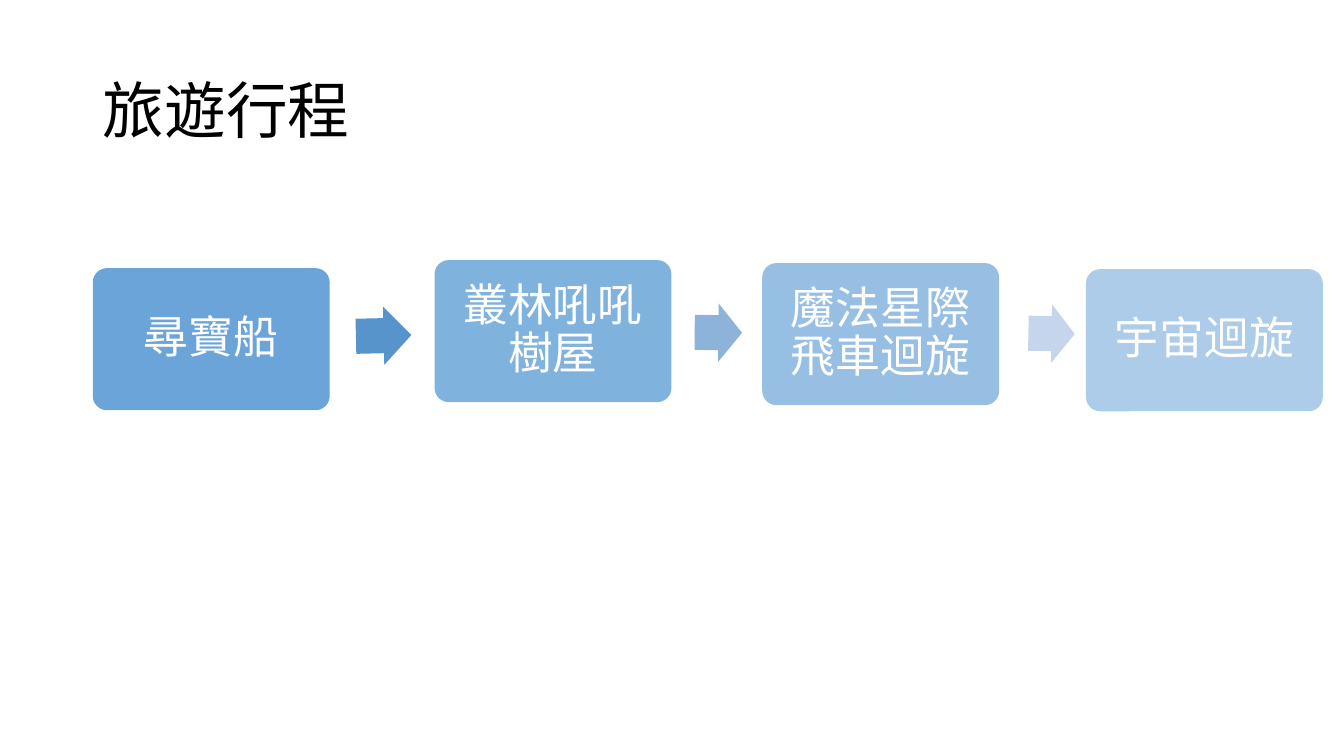
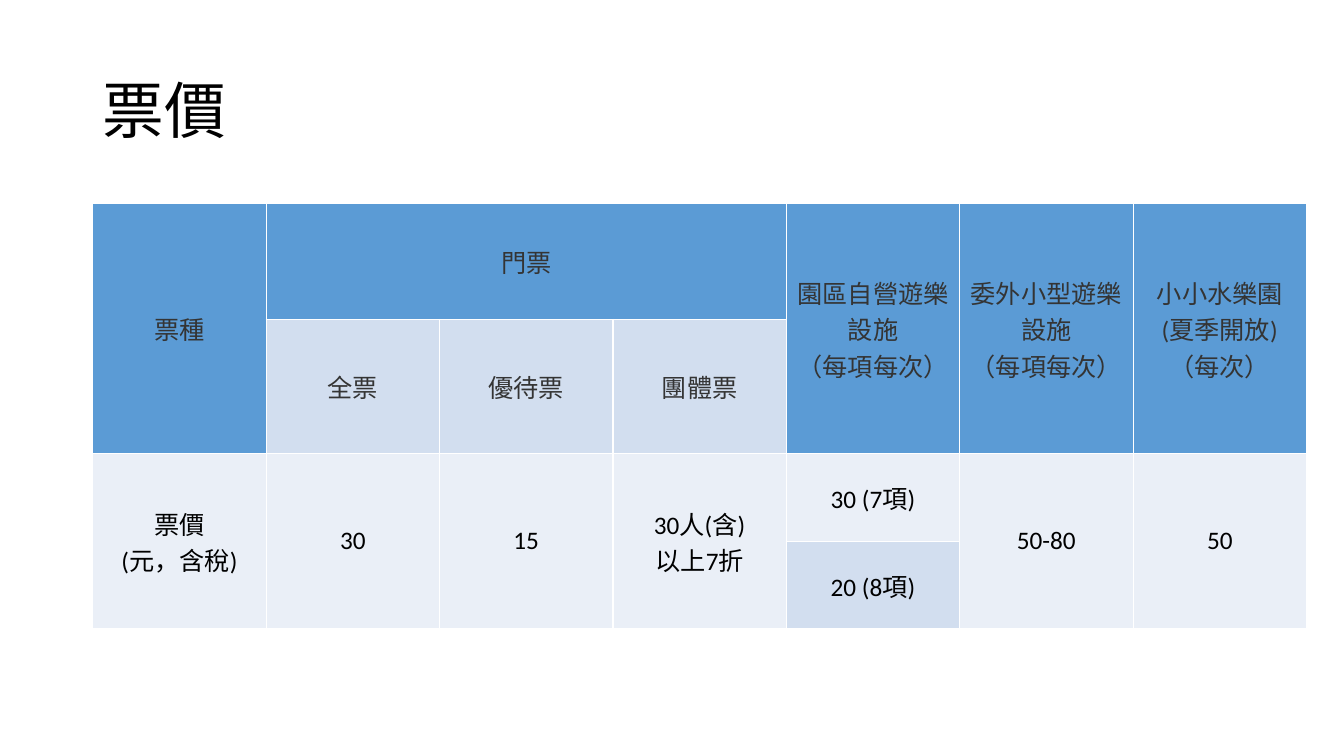
from lxml import etree
from pptx import Presentation
from pptx.dml.color import RGBColor
from pptx.enum.shapes import MSO_SHAPE as Shape
from pptx.enum.text import MSO_ANCHOR as Anchor, MSO_AUTO_SIZE as AutoSize, PP_ALIGN as Align
from pptx.oxml.ns import qn
from pptx.util import Inches, Pt

COLORS = {
    "white": "FFFFFF", "black": "000000", "accent": "5B9BD5", "header_text": "343434",
    "band_dark": "D2DEEF", "band_light": "EAEFF7",
    "arrow_1": "5794CB", "arrow_2": "8EB3DB", "arrow_3": "C5D5EB",
}
FONT = "Calibri"


class Deck:
    def __init__(self):
        self.deck = Presentation()
        self.deck.slide_width, self.deck.slide_height = Inches(13.33), Inches(7.5)
        self.page = None

    def color(self, name):
        return RGBColor.from_string(COLORS[name])

    def set_text(self, frame, text, size, color, align=Align.CENTER, spacing=None, inset=None):
        """Put one formatted paragraph, with line breaks, in a text frame or cell."""
        paragraph = frame.paragraphs[0]
        paragraph.text = text
        paragraph.alignment = align
        paragraph.line_spacing = spacing
        for span in paragraph.runs:
            span.font.name, span.font.size = FONT, Pt(size)
            span.font.color.rgb = self.color(color)
        frame.word_wrap = True
        if inset is not None:
            frame.margin_left = frame.margin_right = Inches(inset)
            frame.margin_top = frame.margin_bottom = Inches(inset)

    def add_page(self, title):
        self.page = self.deck.slides.add_slide(self.deck.slide_layouts[5])
        box = self.page.shapes.title
        box.left, box.top = Inches(0.92), Inches(0.4)
        box.width, box.height = Inches(11.5), Inches(1.45)
        box.text_frame.auto_size = AutoSize.NONE
        box.text_frame.vertical_anchor = Anchor.MIDDLE
        self.set_text(box.text_frame, title, 44, "black", Align.LEFT, 0.9)

    def add_block(self, kind, left, top, width, height, color):
        """Add a borderless, shadowless filled shape."""
        block = self.page.shapes.add_shape(
            kind, Inches(left), Inches(top), Inches(width), Inches(height))
        block.shadow.inherit = False
        block.fill.solid()
        block.fill.fore_color.rgb = self.color(color)
        block.line.fill.background()
        return block

    def add_step(self, text, left, top, opacity):
        step = self.add_block(Shape.ROUNDED_RECTANGLE, left, top, 2.35, 1.41, "accent")
        step.adjustments[0] = 0.1
        fill_color = step.element.spPr.find(qn("a:solidFill"))[0]
        etree.SubElement(fill_color, qn("a:alpha"), val=str(opacity * 1000))
        step.text_frame.vertical_anchor = Anchor.MIDDLE
        self.set_text(step.text_frame, text, 32, "white", spacing=0.9, inset=0.13)

    def add_arrow(self, left, top, width, rotation, color):
        arrow = self.add_block(Shape.RIGHT_ARROW, left, top, width, 0.58, color)
        arrow.adjustments[0], arrow.adjustments[1] = 0.6, 0.5
        arrow.rotation = rotation

    def add_borders(self, cell):
        properties = cell._tc.get_or_add_tcPr()
        for side in ("lnL", "lnR", "lnT", "lnB"):
            line = etree.SubElement(properties, qn(f"a:{side}"), w=str(Pt(1)))
            fill = etree.SubElement(line, qn("a:solidFill"))
            etree.SubElement(fill, qn("a:srgbClr"), val=COLORS["white"])

    def add_table(self, left, top, column_width, columns, row_heights, entries):
        """Fill a table from (row, column, rows, columns, text, fill, text color) entries."""
        table = self.page.shapes.add_table(
            len(row_heights), columns, Inches(left), Inches(top),
            Inches(column_width * columns), Inches(sum(row_heights))).table
        table.first_row = table.horz_banding = False
        for column in table.columns:
            column.width = Inches(column_width)
        for row, height in zip(table.rows, row_heights):
            row.height = Inches(height)
        for row, column, height, width, text, fill, ink in entries:
            cell = table.cell(row, column)
            if height * width > 1:
                cell.merge(table.cell(row + height - 1, column + width - 1))
            for r in range(row, row + height):
                for c in range(column, column + width):
                    part = table.cell(r, c)
                    self.add_borders(part)
                    part.fill.solid()
                    part.fill.fore_color.rgb = self.color(fill)
            cell.margin_left = cell.margin_right = Inches(0.03)
            cell.margin_top = cell.margin_bottom = Inches(0.03)
            cell.vertical_anchor = Anchor.MIDDLE
            self.set_text(cell.text_frame, text, 18, ink)


def build_itinerary(deck):
    deck.add_page("旅遊行程")
    for step in (
        ("尋寶船", 0.92, 2.66, 90),
        ("叢林吼吼樹屋", 4.31, 2.58, 77),
        ("魔法星際飛車迴旋", 7.56, 2.61, 63),
        ("宇宙迴旋", 10.77, 2.67, 50),
    ):
        deck.add_step(*step)
    for arrow in (
        (3.53, 3.04, 0.55, 358.7, "arrow_1"),
        (6.89, 3.01, 0.47, 0.5, "arrow_2"),
        (10.2, 3.02, 0.46, 1, "arrow_3"),
    ):
        deck.add_arrow(*arrow)


def build_prices(deck):
    deck.add_page("票價")
    header = ("accent", "header_text")
    subheader = ("band_dark", "header_text")
    light, dark = ("band_light", "black"), ("band_dark", "black")
    deck.add_table(0.92, 2.02, 1.72, 7, (1.15, 1.33, 0.87, 0.87), (
        (0, 0, 2, 1, "票種", *header),
        (0, 1, 1, 3, "門票", *header),
        (0, 4, 2, 1, "園區自營遊樂設施\n（每項每次）", *header),
        (0, 5, 2, 1, "委外小型遊樂設施\n（每項每次）", *header),
        (0, 6, 2, 1, "小小水樂園\n(夏季開放)\n（每次）", *header),
        (1, 1, 1, 1, "全票", *subheader),
        (1, 2, 1, 1, "優待票", *subheader),
        (1, 3, 1, 1, "團體票", *subheader),
        (2, 0, 2, 1, "票價\n(元，含稅)", *light),
        (2, 1, 2, 1, "30", *light),
        (2, 2, 2, 1, "15", *light),
        (2, 3, 2, 1, "30人(含)\n以上7折", *light),
        (2, 4, 1, 1, "30 (7項)", *light),
        (3, 4, 1, 1, "20 (8項)", *dark),
        (2, 5, 2, 1, "50-80", *light),
        (2, 6, 2, 1, "50", *light),
    ))


def main():
    deck = Deck()
    build_itinerary(deck)
    build_prices(deck)
    deck.deck.save("out.pptx")


if __name__ == "__main__":
    main()
